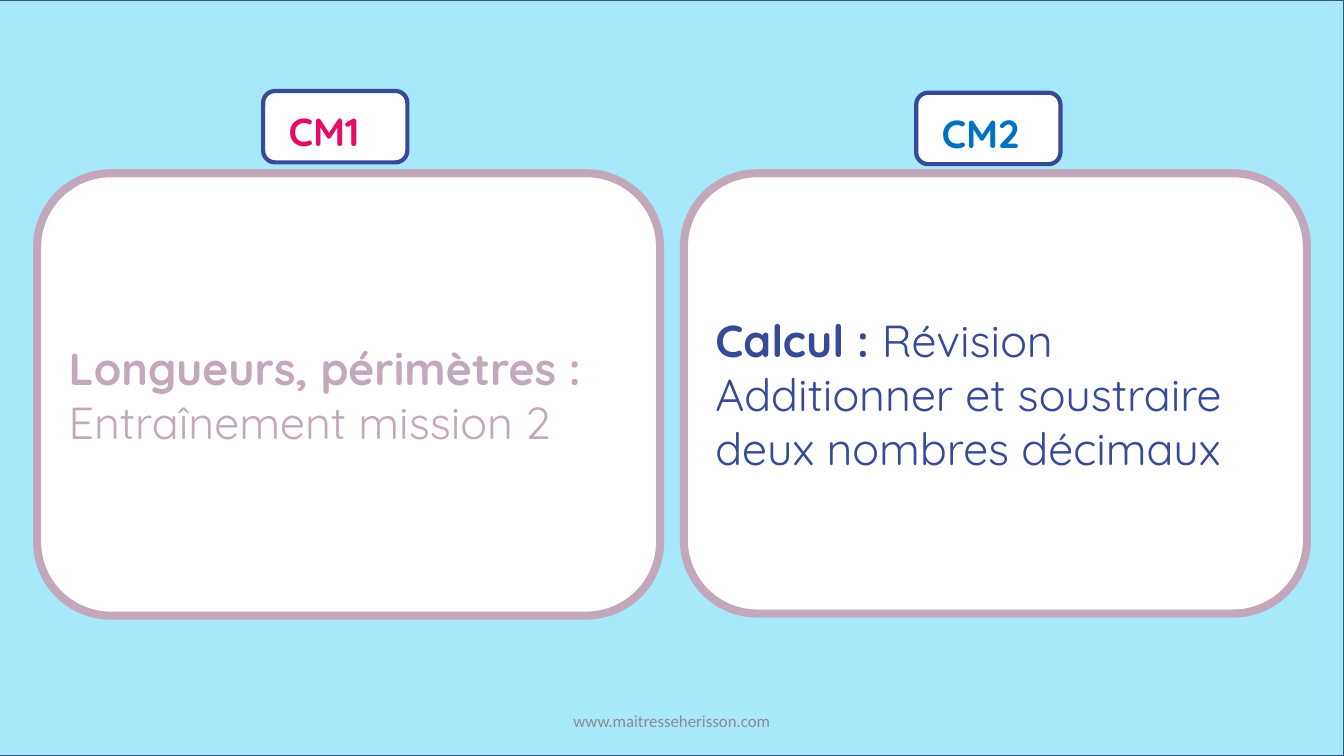
from pptx import Presentation
from pptx.dml.color import RGBColor as RGB
from pptx.enum.shapes import MSO_SHAPE as Shape
from pptx.enum.text import MSO_ANCHOR as Anchor, PP_ALIGN as Align
from pptx.util import Pt

SKY = RGB(0xA7, 0xE8, 0xFB)
EDGE = RGB(0x32, 0x54, 0x91)
NAVY = RGB(0x37, 0x49, 0x97)
MAUVE = RGB(0xC3, 0xA7, 0xBA)
PINK = RGB(0xE5, 0x0C, 0x67)
BLUE = RGB(0x00, 0x70, 0xC0)
GREY = RGB(0x8C, 0x8C, 0x8C)
WHITE = RGB(0xFF, 0xFF, 0xFF)

WIDE, HIGH = 960, 540


def write(shape, paras, size=32, color=NAVY, font="Quicksand",
          align=Align.LEFT, anchor=Anchor.MIDDLE):
    """Fill a shape with paragraphs, each a list of (text, bold) runs."""
    frame = shape.text_frame
    frame.word_wrap = True
    frame.vertical_anchor = anchor
    for i, runs in enumerate(paras):
        para = frame.add_paragraph() if i else frame.paragraphs[0]
        para.alignment = align
        for text, bold in runs:
            run = para.add_run()
            run.text = text
            run.font.name = font
            run.font.size = Pt(size)
            run.font.bold = bold
            run.font.color.rgb = color


def panel(shapes, kind, box, fill, line, width):
    shape = shapes.add_shape(kind, *map(Pt, box))
    shape.shadow.inherit = False
    shape.fill.solid()
    shape.fill.fore_color.rgb = fill
    shape.line.color.rgb = line
    shape.line.width = Pt(width)
    return shape


def badge(slide, left, top, level, color):
    """Draw the class label as a group of frame and text."""
    group = slide.shapes.add_group_shape()
    panel(group.shapes, Shape.ROUNDED_RECTANGLE,
          (left, top, 103, 51), WHITE, NAVY, 3)
    label = group.shapes.add_textbox(
        Pt(left + 11), Pt(top + 8), Pt(79), Pt(41))
    write(label, [[(level, True)]], size=28, color=color, anchor=Anchor.TOP)


def card(slide, box, paras, color):
    shape = panel(slide.shapes, Shape.ROUNDED_RECTANGLE,
                  box, WHITE, MAUVE, 5.75)
    write(shape, paras, color=color)


def footer(slide, box, text):
    shape = slide.shapes.add_textbox(*map(Pt, box))
    write(shape, [[(text, False)]], size=12, color=GREY,
          font="Calibri", align=Align.CENTER)


def main():
    deck = Presentation()
    deck.slide_width, deck.slide_height = Pt(WIDE), Pt(HIGH)
    slide = deck.slides.add_slide(deck.slide_layouts[6])
    panel(slide.shapes, Shape.RECTANGLE, (-0.5, 0, WIDE, HIGH), SKY, EDGE, 1)

    card(slide, (26.5, 123.75, 445, 316),
         [[("Longueurs, périmètres : ", True),
           ("Entraînement mission 2", False)]], MAUVE)
    card(slide, (488.5, 123.75, 445, 314.5),
         [[("Calcul : ", True), ("Révision", False)],
          [("Additionner et soustraire deux nombres décimaux", False)]], NAVY)

    badge(slide, 188, 65, "CM1", PINK)
    badge(slide, 654.5, 66.25, "CM2", BLUE)
    footer(slide, (318, 500.5, 324, 28.75), "www.maitresseherisson.com")
    deck.save("out.pptx")


if __name__ == "__main__":
    main()
